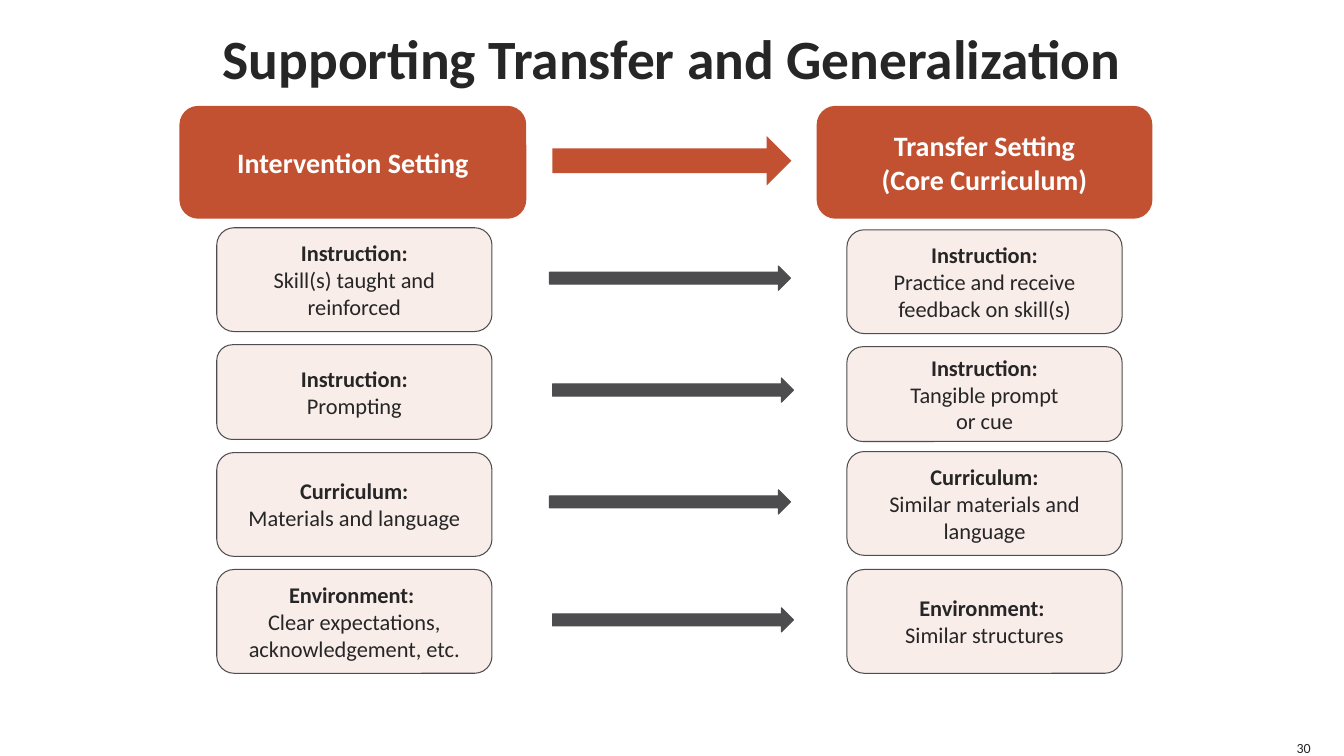
from dataclasses import dataclass
from pptx import Presentation, util as u
from pptx.dml.color import RGBColor
from pptx.enum import shapes, text

PX = 9144
BOX = shapes.MSO_SHAPE.ROUNDED_RECTANGLE
ARROW = shapes.MSO_SHAPE.RIGHT_ARROW


@dataclass(frozen=True)
class Theme:
    font: str = "Calibri"
    rust: str = "C25131"
    blush: str = "F9EDEA"
    gray: str = "4D4D4F"
    ink: str = "262626"
    white: str = "FFFFFF"
    title: float = 39.6
    head: float = 20
    body: float = 16
    page: float = 10


@dataclass(frozen=True)
class Rect:
    left: int
    top: int
    width: int
    height: int

    def emu(self) -> list[int]:
        return [n * PX for n in (self.left, self.top, self.width, self.height)]


@dataclass(frozen=True)
class Row:
    label: str
    source: str
    target: str
    left_top: int
    right_top: int
    height: int
    arrow_left: int
    arrow_top: int


THEME = Theme()
ROWS = [
    Row("Instruction:", "Skill(s) taught and reinforced",
        "Practice and receive feedback on skill(s)", 226, 228, 103, 545, 264),
    Row("Instruction:", "Prompting",
        "Tangible prompt\vor cue", 342, 344, 94, 548, 375),
    Row("Curriculum:", "Materials and language",
        "Similar materials and language", 449, 448, 103, 545, 486),
    Row("Environment: ", "Clear expectations, acknowledgement, etc.",
        "Similar structures", 565, 565, 103, 548, 603),
]


def write(frame, words: str, size: float, color: str, bold: int = 0,
          align=text.PP_ALIGN.CENTER) -> None:
    frame.text = words
    for spot, para in enumerate(frame.paragraphs):
        para.alignment = align
        for run in para.runs:
            font = run.font
            font.name, font.size = THEME.font, u.Pt(size)
            font.bold = spot < bold
            font.color.rgb = RGBColor.from_string(color)


def label(slide, rect: Rect, words: str, size: float, bold: int,
          align, wrap: bool, anchor) -> None:
    frame = slide.shapes.add_textbox(*rect.emu()).text_frame
    frame.margin_left = frame.margin_right = 0
    frame.margin_top = frame.margin_bottom = 0
    frame.word_wrap = wrap
    frame.vertical_anchor = anchor
    write(frame, words, size, THEME.ink, bold, align)


def block(slide, kind, rect: Rect, fill: str, line: str = ""):
    shape = slide.shapes.add_shape(kind, *rect.emu())
    shape.shadow.inherit = False
    shape.fill.solid()
    shape.fill.fore_color.rgb = RGBColor.from_string(fill)
    if line:
        shape.line.color.rgb = RGBColor.from_string(line)
        shape.line.width = u.Pt(0.75)
    else:
        shape.line.fill.background()
    frame = shape.text_frame
    frame.word_wrap = True
    frame.vertical_anchor = text.MSO_ANCHOR.MIDDLE
    return frame


def header(slide, rect: Rect, words: str) -> None:
    frame = block(slide, BOX, rect, THEME.rust)
    write(frame, words, THEME.head, THEME.white, bold=2)


def card(slide, left: int, top: int, height: int, words: str) -> None:
    rect = Rect(left, top, 273, height)
    frame = block(slide, BOX, rect, THEME.blush, THEME.gray)
    write(frame, words, THEME.body, THEME.ink, bold=1)


def main() -> None:
    deck = Presentation()
    deck.slide_width, deck.slide_height = u.Inches(13.33), u.Inches(7.5)
    slide = deck.slides.add_slide(deck.slide_layouts[6])

    label(slide, Rect(50, 24, 1233, 66), "Supporting Transfer and Generalization",
          THEME.title, 1, text.PP_ALIGN.CENTER, True, text.MSO_ANCHOR.MIDDLE)
    header(slide, Rect(178, 105, 344, 112), "Intervention Setting")
    block(slide, ARROW, Rect(548, 135, 237, 49), THEME.rust)
    header(slide, Rect(810, 105, 333, 112), "Transfer Setting\n(Core Curriculum)")

    for row in ROWS:
        card(slide, 215, row.left_top, row.height, f"{row.label}\n{row.source}")
        block(slide, ARROW, Rect(row.arrow_left, row.arrow_top, 239, 24),
              THEME.gray, THEME.gray)
        card(slide, 840, row.right_top, row.height, f"{row.label}\n{row.target}")

    label(slide, Rect(1283, 733, 17, 17), "30", THEME.page, 0,
          text.PP_ALIGN.RIGHT, False, text.MSO_ANCHOR.BOTTOM)
    deck.save("out.pptx")


if __name__ == "__main__":
    main()
